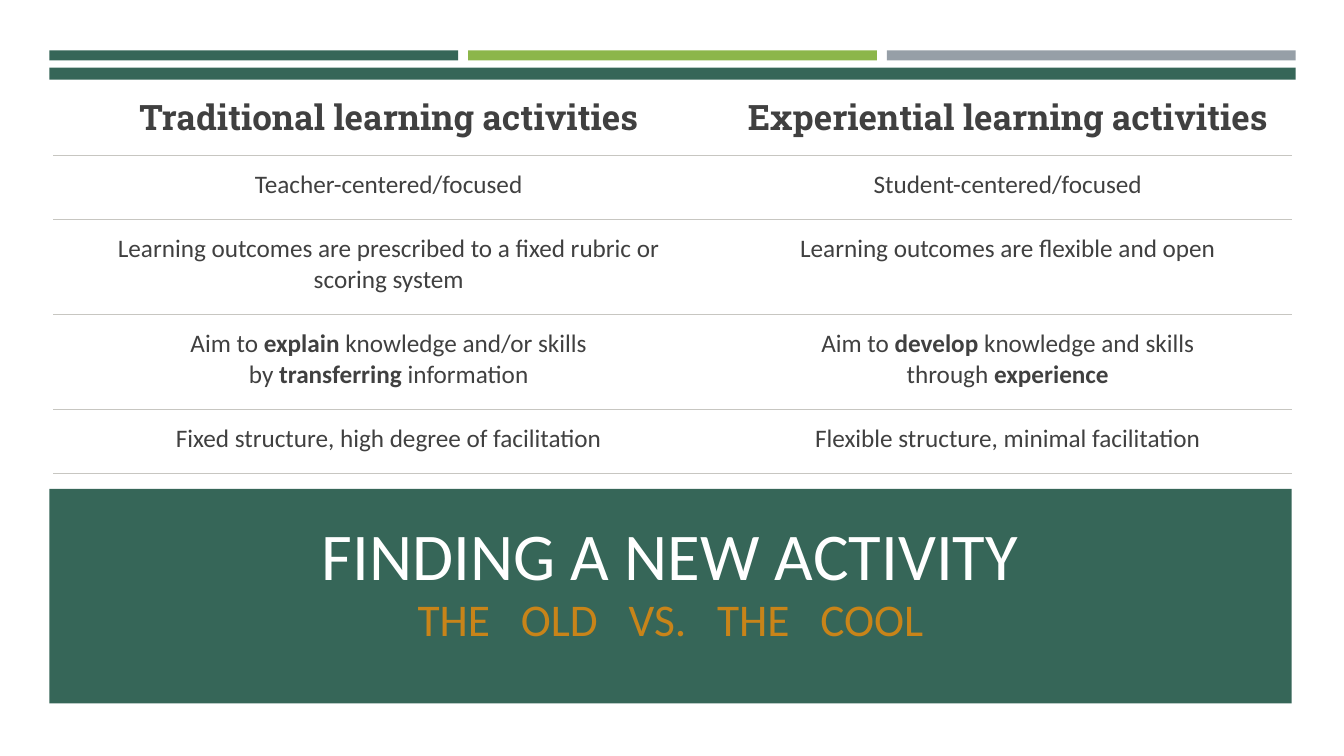
from lxml.etree import SubElement
from pptx import Presentation
from pptx.dml.color import RGBColor
from pptx.enum.shapes import MSO_SHAPE as SHAPE
from pptx.enum.text import MSO_ANCHOR as ANCHOR, PP_ALIGN as ALIGN
from pptx.oxml.ns import qn
from pptx.util import Inches, Pt

W, H = 13.33, 7.5
GREEN, LIME, GREY, ORANGE = "366658", "8CB64A", "969FA7", "C88419"
WHITE, INK, RULE = "FFFFFF", "404040", "C7C6C1"
NBSP = chr(160)
ROWS = [
    ("Traditional learning activities", "Experiential learning activities"),
    ("Teacher-centered/focused", "Student-centered/focused"),
    ("Learning outcomes are prescribed to a fixed rubric or scoring system",
     "Learning outcomes are flexible and open"),
    ("Aim to **explain** knowledge and/or skills by **transferring** information",
     "Aim to **develop** knowledge and skills through **experience**"),
    ("Fixed structure, high degree of facilitation",
     "Flexible structure, minimal facilitation"),
]
COL_WIDTHS = (6.58, 5.7)
ROW_HEIGHTS = (0.75, 0.64, 0.94, 0.94, 0.64)


def rgb(color):
    """Return the colour of a hex string."""
    return RGBColor.from_string(color)


def add_block(s, x, y, w, h, color):
    """Add a plain filled rectangle."""
    sp = s.shapes.add_shape(SHAPE.RECTANGLE, *map(Inches, (x, y, w, h)))
    sp.shadow.inherit = False
    sp.fill.solid()
    sp.fill.fore_color.rgb = rgb(color)
    sp.line.fill.background()


def add_header(s, x, y, w, h):
    """Add the deep band and the three equal bars above it."""
    add_block(s, x, y + 0.17, w, h - 0.17, GREEN)
    gap = 0.1
    bar = (w - 2 * gap) / 3
    for i, color in enumerate((GREEN, LIME, GREY)):
        add_block(s, x + i * (bar + gap), y, bar, 0.1, color)


def add_title(s, x, y, w, h):
    """Add the green panel and place the two-line title in front of it."""
    add_block(s, x, y, w, h, GREEN)
    title = s.shapes.title
    s.shapes._spTree.append(title._element)
    title.left, title.top = Inches(x + 0.15), Inches(y + 0.42)
    title.width, title.height = Inches(w - 0.3), Inches(1.17)
    tf = title.text_frame
    tf.word_wrap = True
    tf.vertical_anchor = ANCHOR.BOTTOM
    tf.margin_top = tf.margin_bottom = Inches(0.02)
    p = tf.paragraphs[0]
    p.alignment = ALIGN.CENTER
    p.line_spacing = 0.95
    p.font.name = "Calibri"
    lines = (("FINDING A NEW ACTIVITY", 47.7, WHITE),
             ("THE   OLD   VS.   THE   COOL", 32.4, ORANGE))
    for i, (text, size, color) in enumerate(lines):
        if i:
            p.add_line_break()
        r = p.add_run()
        r.text = text
        r.font.size = Pt(size)
        r.font.color.rgb = rgb(color)


def set_borders(cell, heading):
    """Draw thin rules below the cell and, outside the heading, above it."""
    tc_pr = cell._tc.get_or_add_tcPr()
    ruled = ("lnB",) if heading else ("lnT", "lnB")
    for i, side in enumerate(("lnL", "lnR", "lnT", "lnB")):
        ln = SubElement(tc_pr, qn(f"a:{side}"), w=str(Pt(0.75)))
        if side in ruled:
            fill = SubElement(ln, qn("a:solidFill"))
            SubElement(fill, qn("a:srgbClr"), val=RULE)
        else:
            SubElement(ln, qn("a:noFill"))
        tc_pr.insert(i, ln)


def fill_cell(cell, text, heading):
    """Write one cell, with the words between double stars in bold."""
    cell.fill.background()
    set_borders(cell, heading)
    cell.margin_left, cell.margin_right = Inches(0.28), Inches(0.21)
    cell.margin_top = cell.margin_bottom = Inches(0.14)
    p = cell.text_frame.paragraphs[0]
    p.alignment = ALIGN.CENTER
    p.font.name = "Roboto Slab" if heading else "Calibri"
    p.font.size = Pt(25 if heading else 18)
    p.font.color.rgb = rgb(INK)
    text = text.replace(" **", NBSP + "**").replace("** ", "**" + NBSP)
    for i, part in enumerate(text.split("**")):
        if part:
            r = p.add_run()
            r.text = part
            r.font.bold = heading or i % 2 == 1


def add_comparison(s, x, y):
    """Add the comparison table."""
    size = sum(COL_WIDTHS), sum(ROW_HEIGHTS)
    table = s.shapes.add_table(len(ROWS), len(COL_WIDTHS),
                               *map(Inches, (x, y, *size))).table
    table.first_row = table.horz_banding = False
    for column, width in zip(table.columns, COL_WIDTHS):
        column.width = Inches(width)
    for i, (row, height) in enumerate(zip(table.rows, ROW_HEIGHTS)):
        row.height = Inches(height)
        for cell, text in zip(row.cells, ROWS[i]):
            fill_cell(cell, text, heading=i == 0)


def main():
    """Build the slide and save it."""
    prs = Presentation()
    prs.slide_width, prs.slide_height = Inches(W), Inches(H)
    s = prs.slides.add_slide(prs.slide_layouts[5])
    add_header(s, 0.49, 0.5, 12.36, 0.29)
    add_title(s, 0.49, 4.85, 12.32, 2.13)
    add_comparison(s, 0.53, 0.79)
    prs.save("out.pptx")


if __name__ == "__main__":
    main()
